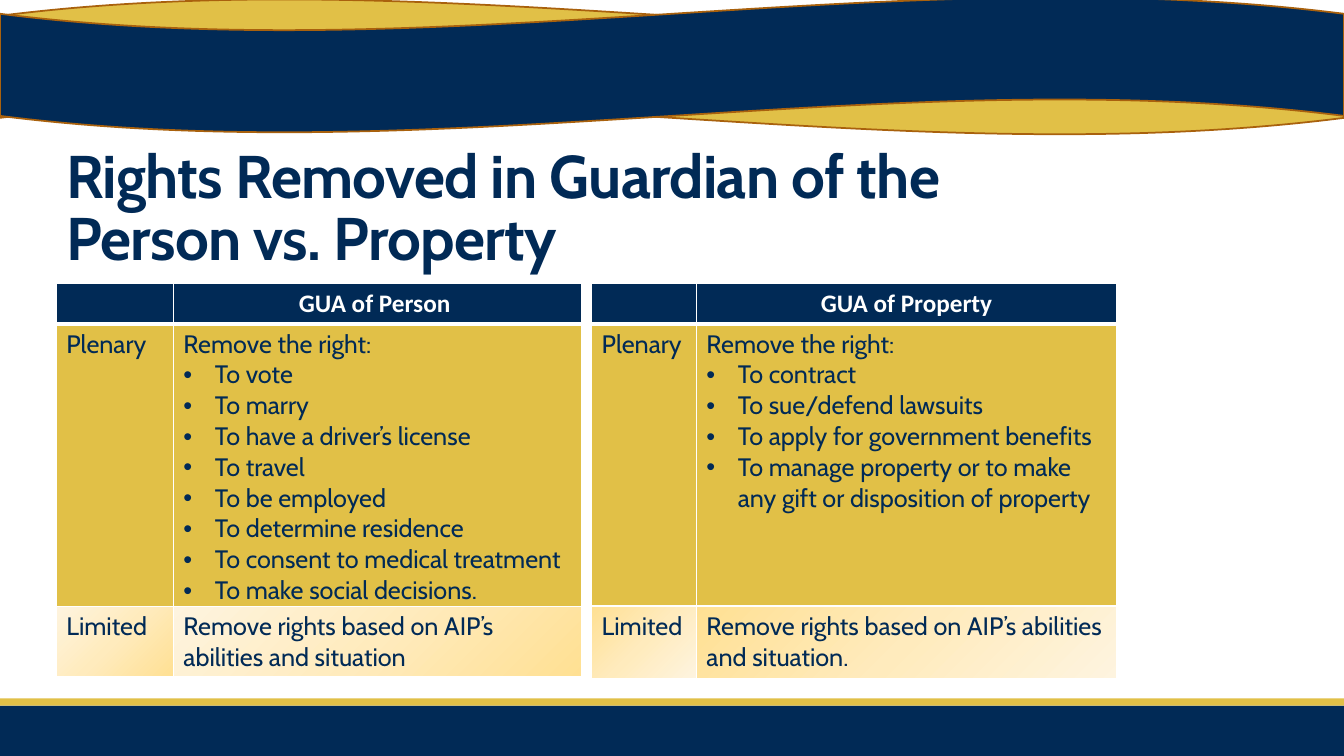
from dataclasses import dataclass

from lxml import etree
from pptx import Presentation
from pptx.dml.color import RGBColor
from pptx.enum import shapes, text
from pptx.oxml import ns
from pptx.util import Cm, Pt

NAVY, GOLD, RUST, WHITE = "012A56", "E1C047", "A9610D", "FFFFFF"
FADE = [(0, "FFE093"), (50, "FFEBBD"), (100, "FEF4DF")]
WIDE = 33.87


@dataclass
class Band:
    kind: shapes.MSO_SHAPE
    top: float
    high: float
    fill: str
    line: bool = False
    flip: bool = False


@dataclass
class Grid:
    left: float
    cols: tuple[float, float]
    last: float
    angle: int
    head: str
    rights: list[str]
    limit: str


RECT, WAVE = shapes.MSO_SHAPE.RECTANGLE, shapes.MSO_SHAPE.WAVE
BANDS = [
    Band(RECT, 17.78, 1.27, NAVY),
    Band(RECT, 17.6, 0.18, GOLD),
    Band(WAVE, -0.03, 3.43, GOLD, line=True),
    Band(WAVE, -0.08, 3.43, NAVY, line=True, flip=True),
]
GRIDS = [
    Grid(1.42, (2.95, 10.29), 1.78, 225, "GUA of Person ",
         ["To vote", "To marry", "To have a driver’s license", "To travel",
          "To be employed", "To determine residence",
          "To consent to medical treatment", "To make social decisions."],
         "Remove rights based on AIP’s abilities and situation"),
    Grid(14.91, (2.64, 10.59), 1.83, 45, "GUA of Property",
         ["To contract", "To sue/defend lawsuits",
          "To apply for government benefits",
          "To manage property or to make any gift or disposition of property"],
         "Remove rights based on AIP’s abilities and situation."),
]


def color(code: str) -> RGBColor:
    return RGBColor.from_string(code)


def child(base, tag: str, **attrs):
    node = etree.SubElement(base, ns.qn(tag))
    for key, val in attrs.items():
        node.set(key, str(val))
    return node


def write(para, words: str, *, size=18, font="Cabin", ink=NAVY, bold=False,
          align=None, bullet=False, track=0, space=None) -> None:
    if bullet:
        props = para._p.get_or_add_pPr()
        props.set("marL", str(Cm(0.79)))
        props.set("indent", str(-Cm(0.79)))
        child(props, "a:buFont", typeface="Arial")
        child(props, "a:buChar", char="•")
    para.text = words
    para.alignment = align
    para.line_spacing = space
    for run in para.runs:
        run.font.size, run.font.name, run.font.bold = Pt(size), font, bold
        run.font.color.rgb = color(ink)
        if track:
            run.font._element.set("spc", str(track))


def draw_band(slide, band: Band) -> None:
    shape = slide.shapes.add_shape(
        band.kind, 0, Cm(band.top), Cm(WIDE), Cm(band.high))
    shape.shadow.inherit = False
    shape.fill.solid()
    shape.fill.fore_color.rgb = color(band.fill)
    if band.line:
        shape.line.color.rgb = color(RUST)
        shape.line.width = Pt(1.25)
    else:
        shape.line.fill.background()
    if band.flip:
        shape._element.spPr.find(ns.qn("a:xfrm")).set("flipH", "1")


def draw_title(slide) -> None:
    box = slide.shapes.add_textbox(Cm(1.42), Cm(2.95), Cm(27.94), Cm(4.04))
    frame = box.text_frame
    frame.word_wrap = True
    frame.vertical_anchor = text.MSO_ANCHOR.BOTTOM
    write(frame.paragraphs[0],
          "Rights Removed in Guardian of the \vPerson vs. Property",
          size=43, bold=True, track=-50, space=0.85)


def paint(cell, row: int, angle: int) -> None:
    props = cell._tc.get_or_add_tcPr()
    thick = {"T": 3 if row == 1 else 1, "B": 3 if row == 0 else 1}
    for side in "LRTB":
        line = child(props, f"a:ln{side}", w=Pt(thick.get(side, 1)))
        child(child(line, "a:solidFill"), "a:srgbClr", val=WHITE)
    if row < 2:
        cell.fill.solid()
        cell.fill.fore_color.rgb = color(GOLD if row else NAVY)
        return
    grad = child(props, "a:gradFill", rotWithShape=1)
    stops = child(grad, "a:gsLst")
    for pos, code in FADE:
        child(child(stops, "a:gs", pos=pos * 1000), "a:srgbClr", val=code)
    child(grad, "a:lin", ang=angle * 60000, scaled=1)


def draw_grid(slide, grid: Grid) -> None:
    rows = (1.02, 7.11, grid.last)
    table = slide.shapes.add_table(
        3, 2, Cm(grid.left), Cm(7.14), Cm(sum(grid.cols)), Cm(sum(rows))).table
    for col, wide in zip(table.columns, grid.cols):
        col.width = Cm(wide)
    for row, high in enumerate(rows):
        table.rows[row].height = Cm(high)
        for cell in table.rows[row].cells:
            paint(cell, row, grid.angle)
    write(table.cell(0, 1).text_frame.paragraphs[0], grid.head,
          font="Calibri", ink=WHITE, bold=True, align=text.PP_ALIGN.CENTER)
    body = {(1, 0): "Plenary", (1, 1): "Remove the right:",
            (2, 0): "Limited", (2, 1): grid.limit}
    for spot, words in body.items():
        write(table.cell(*spot).text_frame.paragraphs[0], words)
    for right in grid.rights:
        write(table.cell(1, 1).text_frame.add_paragraph(), right, bullet=True)


def main() -> None:
    deck = Presentation()
    deck.slide_width, deck.slide_height = Cm(WIDE), Cm(19.05)
    slide = deck.slides.add_slide(deck.slide_layouts[6])
    for band in BANDS:
        draw_band(slide, band)
    draw_title(slide)
    for grid in GRIDS:
        draw_grid(slide, grid)
    deck.save("out.pptx")


if __name__ == "__main__":
    main()
